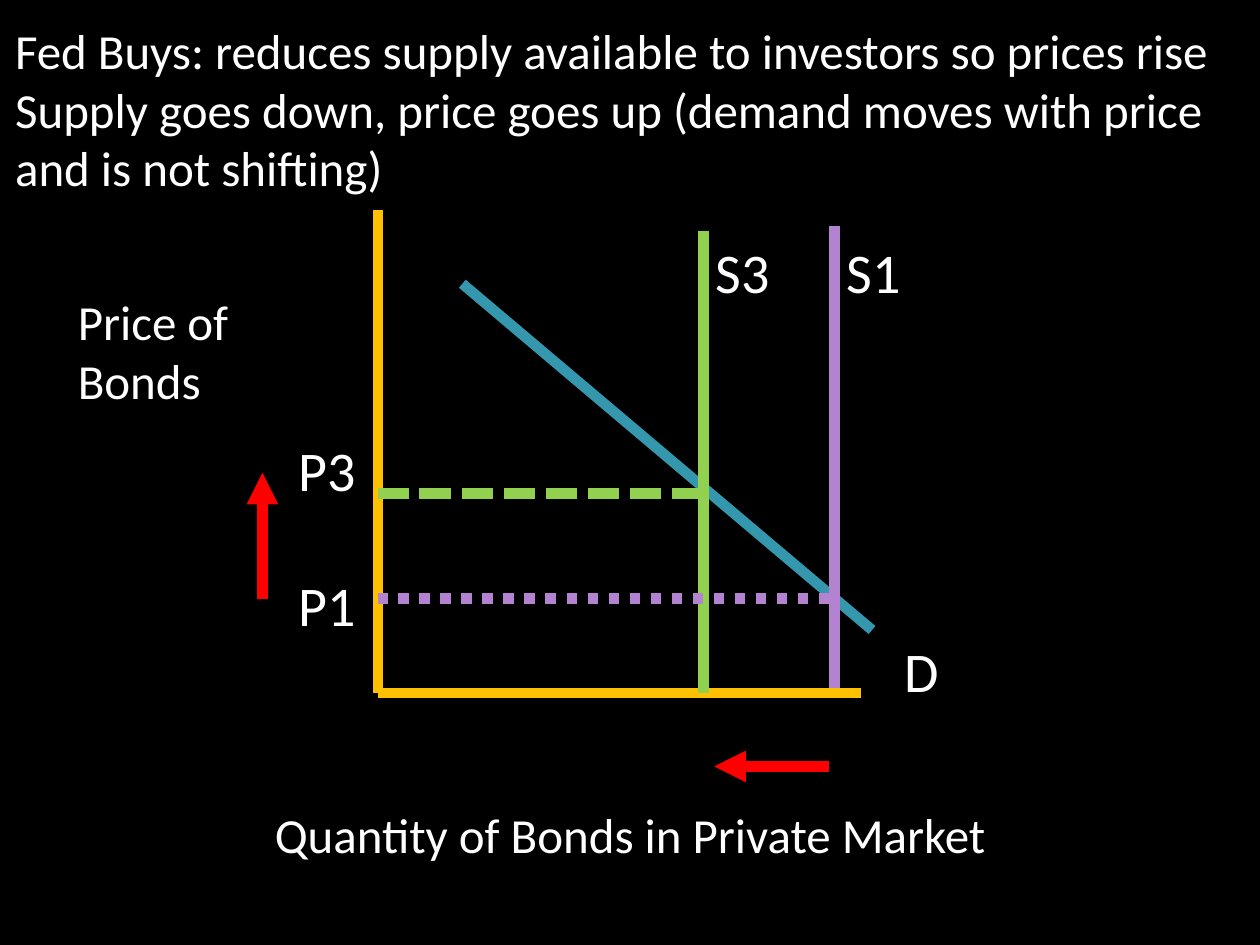
from lxml import etree
from pptx import Presentation
from pptx.dml.color import RGBColor
from pptx.enum.dml import MSO_LINE
from pptx.enum.shapes import MSO_CONNECTOR
from pptx.enum.text import MSO_ANCHOR, MSO_AUTO_SIZE, PP_ALIGN
from pptx.oxml.ns import qn
from pptx.util import Cm, Pt

STRAIGHT = MSO_CONNECTOR.STRAIGHT
DASH = MSO_LINE.SQUARE_DOT  # written to the file as sysDash
DOT = MSO_LINE.ROUND_DOT  # written to the file as sysDot
TOP = MSO_ANCHOR.TOP
LEFT = PP_ALIGN.LEFT
NO_AUTOFIT = MSO_AUTO_SIZE.NONE

COLORS = {
    "background": "000000",
    "text": "FFFFFF",
    "axis": "FFC000",
    "demand": "3497AE",
    "new supply": "92D050",
    "old supply": "B382D0",
    "change": "FF0000",
}

# Positions in the diagram, in centimetres
AXIS_X, AXIS_Y = 7.62, 13.97
S3_X, S1_X = 14.18, 16.82
P3_Y, P1_Y = 9.95, 12.07


def write_text(shape, *lines, size=28):
    frame = shape.text_frame
    frame.auto_size = NO_AUTOFIT
    frame.word_wrap = True
    frame.vertical_anchor = TOP
    frame.text = "\n".join(lines)
    for paragraph in frame.paragraphs:
        paragraph.alignment = LEFT
        paragraph.font.name = "Calibri"
        paragraph.font.size = Pt(size)
        paragraph.font.color.rgb = RGBColor.from_string(COLORS["text"])


presentation = Presentation()
presentation.slide_width = Cm(25.4)
presentation.slide_height = Cm(19.05)
slide = presentation.slides.add_slide(presentation.slide_layouts[5])
slide.background.fill.solid()
slide.background.fill.fore_color.rgb = RGBColor.from_string(COLORS["background"])

title = slide.shapes.title
title.left, title.top, title.width, title.height = Cm(0.05), Cm(0.28), Cm(24.89), Cm(3.84)
write_text(
    title,
    "Fed Buys: reduces supply available to investors so prices rise",
    "Supply goes down, price goes up (demand moves with price and is not shifting)",
)

# Color, start x and y, end x and y, dash, arrowhead
lines = [
    ("axis", AXIS_X, 4.24, AXIS_X, AXIS_Y, None, False),
    ("axis", AXIS_X, AXIS_Y, 17.35, AXIS_Y, None, False),
    ("demand", 9.32, 5.72, 17.58, 12.7, None, False),
    ("new supply", S3_X, 4.65, S3_X, AXIS_Y, None, False),
    ("old supply", S1_X, 4.55, S1_X, 13.87, None, False),
    ("new supply", S3_X, P3_Y, AXIS_X, P3_Y, DASH, False),
    ("old supply", 16.72, P1_Y, AXIS_X, P1_Y, DOT, False),
    ("change", 16.72, 15.45, 14.4, 15.45, None, True),
    ("change", 5.29, P1_Y, 5.29, 9.53, None, True),
]
for color, x1, y1, x2, y2, dash, arrowhead in lines:
    connector = slide.shapes.add_connector(STRAIGHT, Cm(x1), Cm(y1), Cm(x2), Cm(y2))
    connector.line.color.rgb = RGBColor.from_string(COLORS[color])
    connector.line.width = Pt(6)
    if dash:
        connector.line.dash_style = dash
    properties = connector._element.spPr
    if arrowhead:
        etree.SubElement(properties.find(qn("a:ln")), qn("a:tailEnd"), type="triangle")
    etree.SubElement(properties, qn("a:effectLst"))

# Text, left, top, width, height, size
labels = [
    ("S3", S3_X, 4.66, 1.7, 1.63, 32),
    ("S1", S1_X, 4.66, 1.7, 1.63, 32),
    ("D", 17.98, 12.7, 1.22, 1.63, 32),
    ("P3", 5.77, 8.66, 2.54, 1.63, 32),
    ("P1", 5.77, 11.38, 2.54, 1.63, 32),
    ("Price of Bonds", 1.32, 5.75, 4.65, 2.64, 28),
    ("Quantity of Bonds in Private Market", 5.29, 16.09, 16.94, 1.45, 28),
]
for text, left, top, width, height, size in labels:
    box = slide.shapes.add_textbox(Cm(left), Cm(top), Cm(width), Cm(height))
    write_text(box, text, size=size)

presentation.save("out.pptx")
